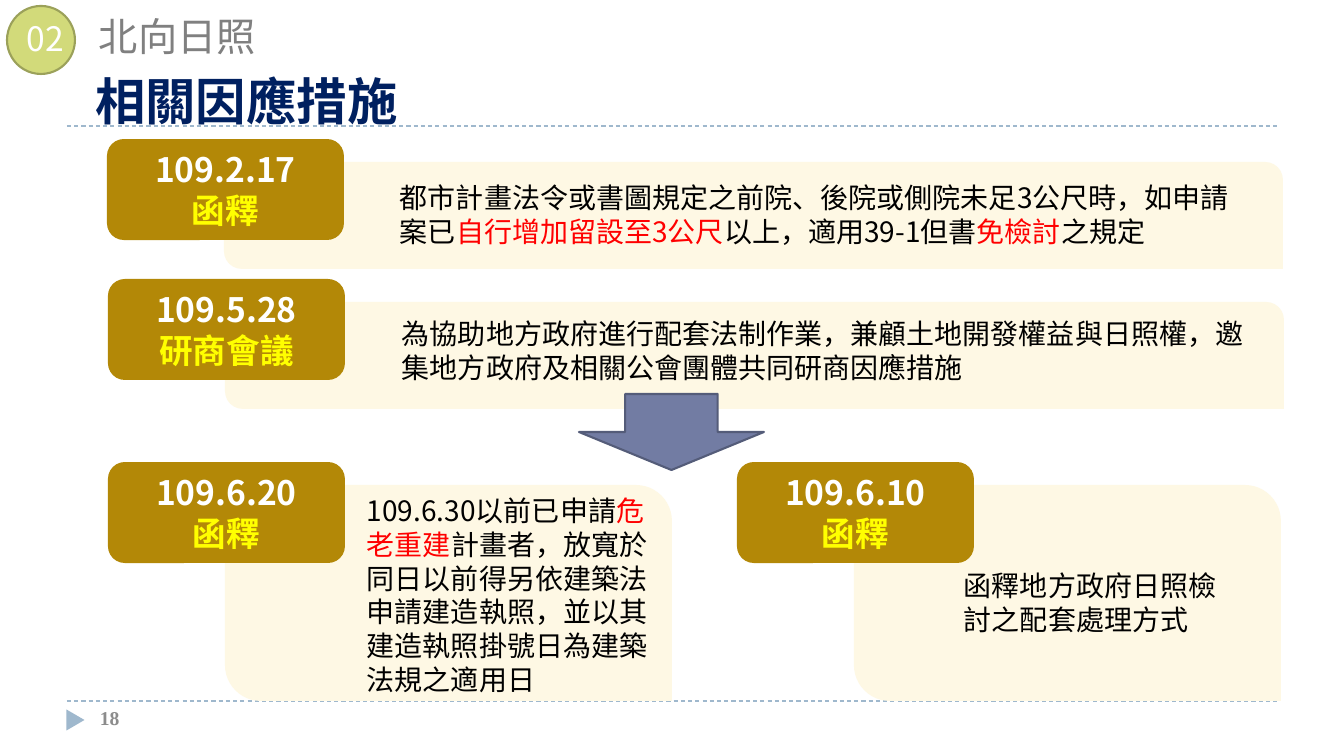
from pptx import Presentation
from pptx.dml.color import RGBColor
from pptx.enum.dml import MSO_LINE_DASH_STYLE as DASH
from pptx.enum.shapes import MSO_CONNECTOR, MSO_SHAPE
from pptx.enum.text import MSO_ANCHOR, MSO_AUTO_SIZE, PP_ALIGN
from pptx.oxml.ns import qn
from pptx.util import Emu, Pt

PX = 914400 / 100.8
CJK = "Noto Sans CJK SC"
SERIF = "Times New Roman"

WHITE = RGBColor(0xFF, 0xFF, 0xFF)
BLACK = RGBColor(0x00, 0x00, 0x00)
RED = RGBColor(0xFF, 0x00, 0x00)
YELLOW = RGBColor(0xFF, 0xFF, 0x00)
NAVY = RGBColor(0x00, 0x20, 0x60)
GRAY = RGBColor(0x80, 0x80, 0x80)
PAGE_GRAY = RGBColor(0x8C, 0x8C, 0x8C)
RULE_BLUE = RGBColor(0x9F, 0xB8, 0xCD)
LIME = RGBColor(0xD2, 0xDA, 0x7A)
OLIVE = RGBColor(0x9B, 0xA1, 0x5A)
GOLD = RGBColor(0xB3, 0x88, 0x07)
CREAM = RGBColor(0xFE, 0xF8, 0xE4)
SLATE = RGBColor(0x72, 0x7C, 0xA3)
DARK_SLATE = RGBColor(0x54, 0x5C, 0x79)

BADGE_SIZE = (237, 101)
PANEL_OFFSET = (117, 23)

# badge corner, panel size, text box, date, kind, (text, colour) runs
MEASURES = [
    ((107, 139), (1059, 107), (390, 176, 874, 78), "109.2.17", "函釋",
     [("都市計畫法令或書圖規定之前院、後院或側院未足3公尺時，如申請案已", BLACK),
      ("自行增加留設至3公尺", RED), ("以上，適用39-1但書", BLACK),
      ("免檢討", RED), ("之規定", BLACK)]),
    ((108, 279), (1059, 107), (392, 312, 874, 78), "109.5.28", "研商會議",
     [("為協助地方政府進行配套法制作業，兼顧土地開發權益與日照權，"
       "邀集地方政府及相關公會團體共同研商因應措施", BLACK)]),
    ((108, 462), (447, 216), (357, 489, 304, 214), "109.6.20", "函釋",
     [("109.6.30以前已申請", BLACK), ("危老重建", RED),
      ("計畫者，放寬於同日以前得另依建築法申請建造執照，"
       "並以其建造執照掛號日為建築法規之適用日", BLACK)]),
    ((737, 462), (427, 216), (954, 564, 281, 109), "109.6.10", "函釋",
     [("函釋地方政府日照檢討之配套處理方式", BLACK)]),
]


def px(*lengths):
    return [Emu(round(n * PX)) for n in lengths]


def style_run(r, size, color, bold=False, font=CJK):
    r.font.size = Pt(size)
    r.font.bold = bold
    r.font.color.rgb = color
    r.font.name = font
    ea = r._r.get_or_add_rPr().makeelement(qn("a:ea"), {"typeface": font})
    r.font._element.find(qn("a:latin")).addnext(ea)


def add_runs(p, runs, size, bold=False, font=CJK):
    for text, color in runs:
        r = p.add_run()
        r.text = text
        style_run(r, size, color, bold, font)


def add_text(slide, box, runs, size, bold=False, font=CJK, wrap=True):
    tf = slide.shapes.add_textbox(*px(*box)).text_frame
    tf.word_wrap = wrap
    add_runs(tf.paragraphs[0], runs, size, bold, font)


def add_block(slide, kind, box, fill, line=None):
    sp = slide.shapes.add_shape(kind, *px(*box))
    sp.shadow.inherit = False
    sp.fill.solid()
    sp.fill.fore_color.rgb = fill
    if line is None:
        sp.line.fill.background()
    else:
        sp.line.color.rgb = line
        sp.line.width = Pt(1.5)
    return sp


def add_rule(slide, y):
    """Dashed line across the slide."""
    line = slide.shapes.add_connector(MSO_CONNECTOR.STRAIGHT, *px(67, y, 1277, y))
    line.line.color.rgb = RULE_BLUE
    line.line.width = Pt(0.75)
    line.line.dash_style = DASH.DASH
    sp_pr = line._element.spPr
    sp_pr.append(sp_pr.makeelement(qn("a:effectLst"), {}))


def add_title(slide, box, text):
    title = slide.shapes.title
    title.left, title.top, title.width, title.height = px(*box)
    tf = title.text_frame
    tf.text = text
    tf.word_wrap = True
    tf.auto_size = MSO_AUTO_SIZE.NONE
    tf.vertical_anchor = MSO_ANCHOR.TOP
    p = tf.paragraphs[0]
    p.alignment = PP_ALIGN.LEFT
    style_run(p.runs[0], 36, NAVY, bold=True)


def add_measure(slide, corner, panel_size, text_box, date, kind, runs):
    """Cream panel with its text and a gold date badge on the top left corner."""
    panel_corner = [c + d for c, d in zip(corner, PANEL_OFFSET)]
    panel = add_block(slide, MSO_SHAPE.ROUND_2_DIAG_RECTANGLE,
                      (*panel_corner, *panel_size), CREAM)
    panel._element.spPr.find(qn("a:xfrm")).set("flipH", "1")

    badge = add_block(slide, MSO_SHAPE.ROUNDED_RECTANGLE, (*corner, *BADGE_SIZE), GOLD)
    tf = badge.text_frame
    tf.vertical_anchor = MSO_ANCHOR.MIDDLE
    for p, run in ((tf.paragraphs[0], (date, WHITE)), (tf.add_paragraph(), (kind, YELLOW))):
        p.alignment = PP_ALIGN.CENTER
        add_runs(p, [run], 24, bold=True)

    add_text(slide, text_box, runs, 20)


def main():
    prs = Presentation()
    prs.slide_width, prs.slide_height = px(1344, 756)
    slide = prs.slides.add_slide(prs.slide_layouts[5])

    for y in (701, 126):
        add_rule(slide, y)
    marker = add_block(slide, MSO_SHAPE.ISOSCELES_TRIANGLE, (65, 711, 21, 18), RULE_BLUE)
    marker.rotation = 90

    add_title(slide, (85, 65, 380, 72), "相關因應措施")
    add_block(slide, MSO_SHAPE.OVAL, (7, 6, 68, 68), LIME, OLIVE)
    add_text(slide, (17, 13, 59, 50), [("02", WHITE)], 24, wrap=False)
    add_text(slide, (89, 7, 277, 57), [("北向日照", GRAY)], 28)

    for measure in MEASURES:
        add_measure(slide, *measure)
    add_block(slide, MSO_SHAPE.DOWN_ARROW, (579, 394, 185, 76), SLATE, DARK_SLATE)

    add_text(slide, (90, 701, 291, 40), [("18", PAGE_GRAY)], 14, bold=True, font=SERIF)
    prs.save("out.pptx")


if __name__ == "__main__":
    main()
